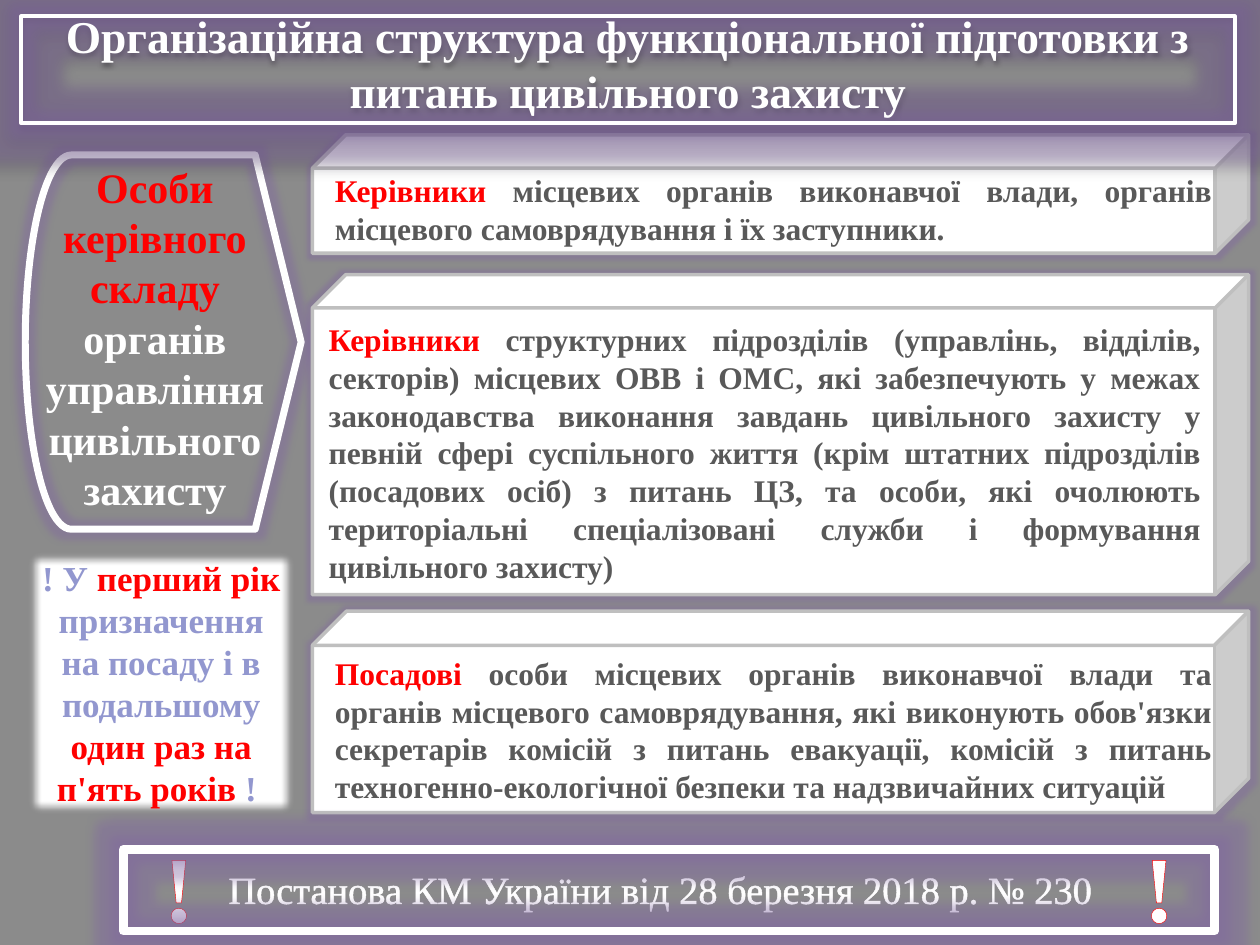
from lxml import etree
from pptx import Presentation
from pptx import util as u
from pptx.dml.color import RGBColor
from pptx.enum import shapes, text
from pptx.oxml.ns import qn

Inches = u.Inches
WHITE, RED, GRAY, LILAC, GLOW = "FFFFFF", "FF0000", "595959", "9297CF", "8064A2"


def color(value):
    return RGBColor.from_string(value)


def child(parent, tag, **attributes):
    """Append an XML element with integer or text attributes."""
    values = {name: str(value) for name, value in attributes.items()}
    return etree.SubElement(parent, qn(tag), values)


def tint(parent, value, alpha):
    """Give an effect its colour and opacity in percent."""
    child(child(parent, "a:srgbClr", val=value), "a:alpha", val=alpha * 1000)


class SlideBuilder:
    font = "Times New Roman"

    def __init__(self, slide):
        self.slide = slide

    def background(self, value):
        fill = self.slide.background.fill
        fill.solid()
        fill.fore_color.rgb = color(value)

    def shape(self, kind, box, line, width, fill=None, adjust=None, rotation=0):
        shape = self.slide.shapes.add_shape(kind, *map(Inches, box))
        shape.shadow.inherit = False
        shape.rotation = rotation
        if adjust is not None:
            shape.adjustments[0] = adjust
        if fill:
            shape.fill.solid()
            shape.fill.fore_color.rgb = color(fill)
        else:
            shape.fill.background()
        shape.line.color.rgb = color(line)
        shape.line.width = u.Pt(width)
        return shape

    def effects(self, shape, glow=0, shadow=False, soft=0):
        """Add a glow and a soft edge (radii in points) and a drop shadow."""
        effects = shape._element.spPr.find(qn("a:effectLst"))
        if glow:
            tint(child(effects, "a:glow", rad=u.Pt(glow)), GLOW, 40)
        if shadow:
            drop = child(effects, "a:outerShdw", blurRad=u.Pt(3.1), dist=u.Pt(1.6),
                         dir=90 * 60000, algn="ctr", rotWithShape=0)
            tint(drop, "000000", 38)
        if soft:
            child(effects, "a:softEdge", rad=u.Pt(soft))

    def add_text(self, shape, runs, size, bold=True, align="CENTER", anchor="TOP",
                 fit="SHAPE_TO_FIT_TEXT"):
        """Fill a shape with runs of (text, colour[, outline colour, width])."""
        frame = shape.text_frame
        formats = {"word_wrap": True, "auto_size": text.MSO_AUTO_SIZE[fit],
                   "vertical_anchor": text.MSO_ANCHOR[anchor]}
        for name, value in formats.items():
            setattr(frame, name, value)
        paragraph = frame.paragraphs[0]
        paragraph.alignment = text.PP_ALIGN[align]
        for content, value, *outline in runs:
            run = paragraph.add_run()
            run.text = content
            formats = {"name": self.font, "size": u.Pt(size), "bold": bold}
            for name, setting in formats.items():
                setattr(run.font, name, setting)
            run.font.color.rgb = color(value)
            if outline:
                line = etree.Element(qn("a:ln"), {"w": str(u.Pt(outline[1]))})
                child(child(line, "a:solidFill"), "a:srgbClr", val=outline[0])
                run.font._element.insert(0, line)

    def text_box(self, box, runs, size, **style):
        shape = self.slide.shapes.add_textbox(*map(Inches, box))
        self.add_text(shape, runs, size, **style)


CUBES = [
    ((2.48, 2.18, 7.43, 2.54), 0.104),
    ((2.48, 4.85, 7.43, 1.6), 0.17),
    ((2.48, 1.07, 7.43, 0.94), 0.282),
]
GROUPS = [
    ((2.56, 1.31, 7.16, 0.71), "Керівники",
     " місцевих органів виконавчої влади, органів місцевого самоврядування "
     "і їх заступники."),
    ((2.51, 2.49, 7.12, 2.22), "Керівники",
     " структурних підрозділів (управлінь, відділів, секторів) місцевих ОВВ і ОМС, "
     "які забезпечують у межах законодавства виконання завдань цивільного захисту у "
     "певній сфері суспільного життя (крім штатних підрозділів (посадових осіб) з "
     "питань ЦЗ, та особи, які очолюють територіальні спеціалізовані служби і "
     "формування цивільного захисту)"),
    ((2.56, 5.14, 7.16, 1.31), "Посадові",
     " особи місцевих органів виконавчої влади та органів місцевого самоврядування, "
     "які виконують обов'язки секретарів комісій з питань евакуації, комісій з питань "
     "техногенно-екологічної безпеки та надзвичайних ситуацій"),
]
NOTE = [
    ("! У ", LILAC, "000000", 0.75),
    ("перший рік ", RED, RED, 0.75),
    ("призначення на посаду і в подальшому ", LILAC, "000000", 0.75),
    ("один раз на п'ять років ", RED, RED, 0.75),
    ("! ", LILAC, "000000", 0.75),
]


def main():
    presentation = Presentation()
    presentation.slide_width, presentation.slide_height = Inches(10), Inches(7.5)
    slide = presentation.slides.add_slide(presentation.slide_layouts[6])
    builder = SlideBuilder(slide)
    builder.background("8B8B8B")
    kinds = shapes.MSO_SHAPE

    audience = builder.shape(kinds.FLOWCHART_DISPLAY, (0.2, 1.23, 2.19, 2.97),
                             WHITE, 4, rotation=180)
    builder.effects(audience, glow=8)
    for box, depth in CUBES:
        cube = builder.shape(kinds.CUBE, box, "BFBFBF", 2, WHITE, depth)
        builder.effects(cube, glow=5)

    builder.text_box((0.11, 1.23, 2.24, 2.93),
                     [("Особи керівного складу ", RED),
                      ("органів управління цивільного захисту", WHITE)], 24)
    builder.text_box((1.24, 6.82, 8, 0.47),
                     [("Постанова КМ України від 28 березня 2018 р. № 230",
                       WHITE, WHITE, 1.45)], 22, bold=False)
    mark = [("!", WHITE, RED, 1)]
    builder.text_box((0.99, 6.52, 0.86, 1.01), mark, 54)
    decree = builder.shape(kinds.RECTANGLE, (0.98, 6.74, 8.66, 0.65), WHITE, 5)
    builder.effects(decree, glow=11)

    for box, lead, rest in GROUPS:
        builder.text_box(box, [(lead, RED), (rest, GRAY)], 18, align="JUSTIFY")
    builder.text_box((8.77, 6.52, 0.86, 1.01), mark, 54)

    title = builder.shape(kinds.RECTANGLE, (0.17, 0.13, 9.63, 0.85), WHITE, 2.25)
    builder.effects(title, glow=14, shadow=True)
    builder.add_text(title, [("Організаційна структура функціональної підготовки "
                              "з питань цивільного захисту", WHITE)], 26,
                     anchor="BOTTOM", fit="NONE")

    note = builder.shape(kinds.RECTANGLE, (0.2, 4.36, 2.16, 2.12), WHITE, 0.75, WHITE)
    builder.effects(note, soft=5)
    builder.add_text(note, NOTE, 20, anchor="MIDDLE")
    presentation.save("out.pptx")


if __name__ == "__main__":
    main()
